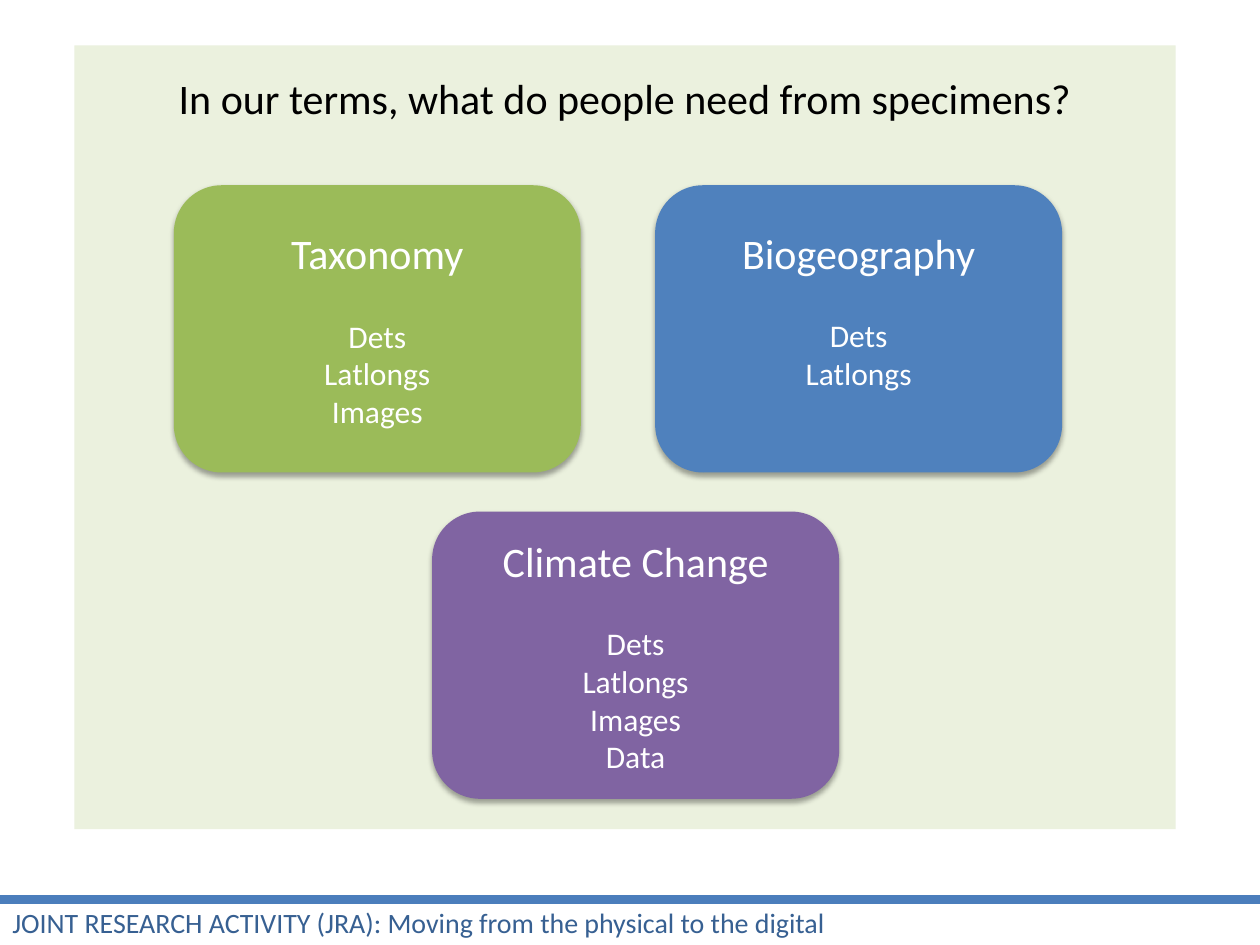
from dataclasses import dataclass

from lxml import etree
from pptx import Presentation
from pptx.dml.color import RGBColor
from pptx.enum.shapes import MSO_CONNECTOR, MSO_SHAPE
from pptx.enum.text import MSO_ANCHOR, PP_ALIGN
from pptx.oxml.ns import qn
from pptx.util import Inches, Pt

RECTANGLE = MSO_SHAPE.RECTANGLE
ROUNDED = MSO_SHAPE.ROUNDED_RECTANGLE
STRAIGHT = MSO_CONNECTOR.STRAIGHT
CENTER, LEFT = PP_ALIGN.CENTER, PP_ALIGN.LEFT
MIDDLE = MSO_ANCHOR.MIDDLE

COLUMNS, ROWS = 100, 75
CELL = Inches(0.1)
FONT = "Calibri"
BODY_LINE = Pt(22)
COLORS = {
    "panel": "EBF1DE",
    "green": "9BBB59",
    "blue": "4F81BD",
    "purple": "8064A2",
    "white": "FFFFFF",
    "black": "000000",
    "rule": "4B7EBC",
    "footer": "376092",
}


@dataclass
class Box:
    """A rectangle measured in grid columns and rows."""

    left: float
    top: float
    width: float
    height: float

    def inner(self, left, top, width, height):
        """Return a box offset from this one's top left corner."""
        return Box(self.left + left, self.top + top, width, height)

    def emu(self):
        """Return the position and size as slide lengths."""
        cells = (self.left, self.top, self.width, self.height)
        return [round(cell * CELL) for cell in cells]


def color(name):
    """Look up a named colour."""
    return RGBColor.from_string(COLORS[name])


def style_paragraph(para, size, ink, align):
    """Set the alignment of a paragraph and the font of its runs."""
    para.alignment = align
    for span in para.runs:
        span.font.name = FONT
        span.font.size = Pt(size)
        span.font.color.rgb = color(ink)


def add_block(page, kind, box, fill):
    """Add a filled shape without outline or shadow."""
    block = page.shapes.add_shape(kind, *box.emu())
    block.shadow.inherit = False
    block.fill.solid()
    block.fill.fore_color.rgb = color(fill)
    block.line.fill.background()
    return block


def add_label(page, box, text, size, ink, align):
    """Add a wrapped line of text."""
    label = page.shapes.add_textbox(*box.emu())
    label.text_frame.word_wrap = True
    label.text_frame.text = text
    style_paragraph(label.text_frame.paragraphs[0], size, ink, align)


def add_soft_shadow(block):
    """Drop a soft black shadow straight below a shape."""
    effects = block.element.spPr.find(qn("a:effectLst"))
    shadow = etree.SubElement(
        effects, qn("a:outerShdw"), blurRad=str(Pt(3.1)), dist=str(Pt(1.8)),
        dir="5400000", rotWithShape="0")
    ink = etree.SubElement(shadow, qn("a:srgbClr"), val=COLORS["black"])
    etree.SubElement(ink, qn("a:alpha"), val="35000")


def add_card(page, box, fill, title, needs, spare_lines=0):
    """Add a rounded card with a title and a list of needs."""
    card = add_block(page, ROUNDED, box, fill)
    add_soft_shadow(card)
    frame = card.text_frame
    frame.word_wrap = True
    frame.vertical_anchor = MIDDLE
    frame.margin_bottom += spare_lines * BODY_LINE
    frame.text = "\n".join([title, *needs])
    heading, *items = frame.paragraphs
    style_paragraph(heading, 24, "white", CENTER)
    for item in items:
        style_paragraph(item, 18, "white", CENTER)
    items[0].space_before = BODY_LINE


def add_panel(page, box):
    """Add the tinted panel with its question and three cards."""
    add_block(page, RECTANGLE, box, "panel")
    needs = ["Dets", "Latlongs", "Images", "Data"]
    cards = [
        (7.9, 11.1, "green", "Taxonomy", 3, 0),
        (46.1, 11.1, "blue", "Biogeography", 2, 1),
        (28.4, 37, "purple", "Climate Change", 4, 0),
    ]
    for left, top, fill, title, count, spare_lines in cards:
        add_card(page, box.inner(left, top, 32.3, 22.8), fill, title,
                 needs[:count], spare_lines)
    add_label(page, box.inner(0, 1.7, box.width, 5),
              "In our terms, what do people need from specimens?",
              24, "black", CENTER)


def add_footer(page, box):
    """Add the thick rule and the activity name below it."""
    left, top, width, _ = box.emu()
    rule = page.shapes.add_connector(STRAIGHT, left, top, left + width, top)
    rule.line.color.rgb = color("rule")
    rule.line.width = Pt(5.5)
    etree.SubElement(rule.element.spPr, qn("a:effectLst"))
    add_label(page, box.inner(0, 0, 77.6, box.height),
              "JOINT RESEARCH ACTIVITY (JRA): Moving from the physical to the digital",
              16, "footer", LEFT)


def main():
    """Build the slide and save the deck."""
    deck = Presentation()
    deck.slide_width = COLUMNS * CELL
    deck.slide_height = ROWS * CELL
    page = deck.slides.add_slide(deck.slide_layouts[6])
    add_panel(page, Box(5.9, 3.6, 87.4, 62.2))
    add_footer(page, Box(0, 71.4, COLUMNS, 3.7))
    deck.save("out.pptx")


if __name__ == "__main__":
    main()
